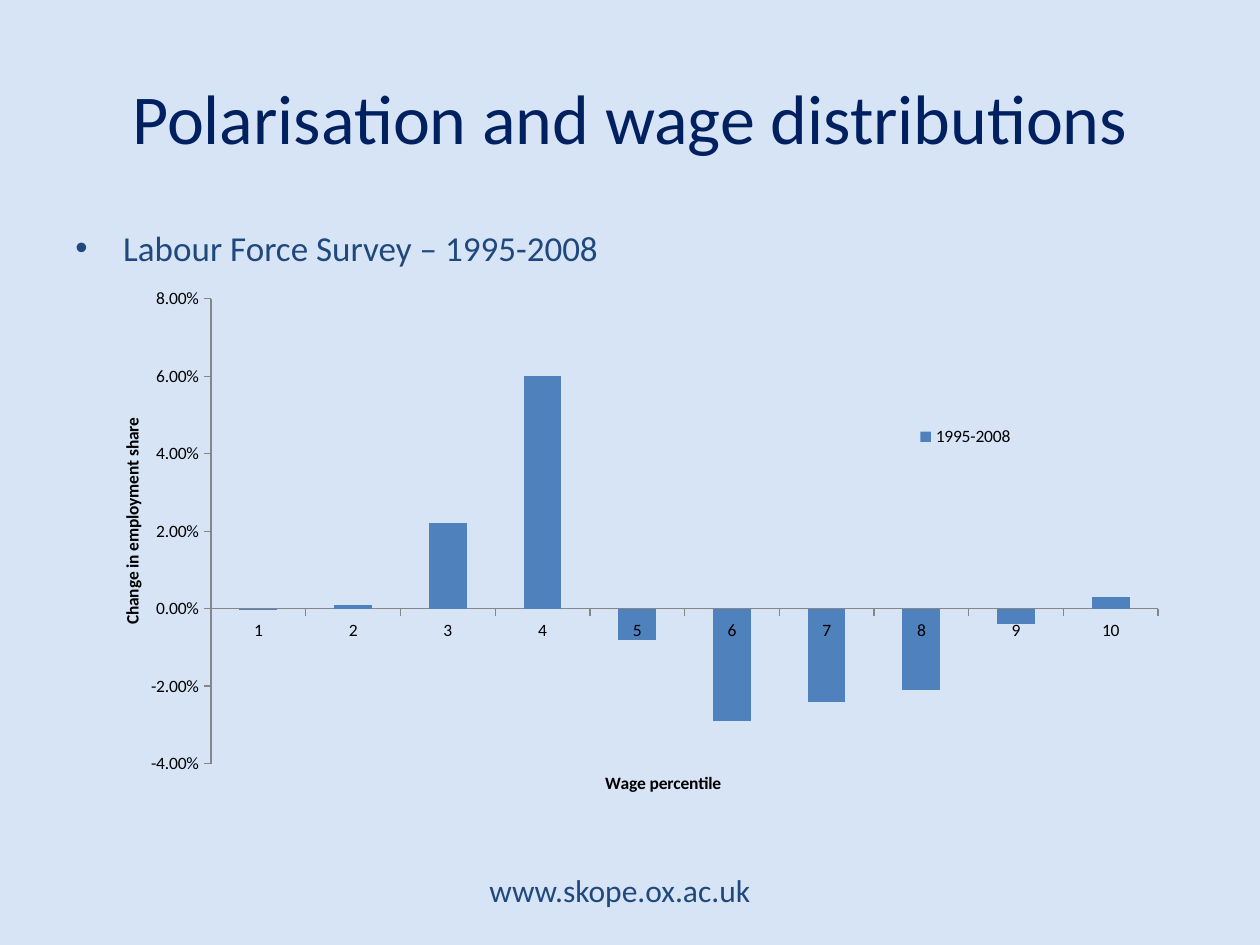
from lxml.etree import SubElement
from pptx import Presentation
from pptx.chart.data import CategoryChartData
from pptx.dml.color import RGBColor
from pptx.enum.chart import XL_CHART_TYPE, XL_LEGEND_POSITION, XL_TICK_MARK
from pptx.enum.text import MSO_ANCHOR, PP_ALIGN
from pptx.oxml import parse_xml
from pptx.oxml.ns import nsdecls, qn
from pptx.util import Inches, Pt


def color(value):
    return RGBColor.from_string(value)


def set_layout(element, index, inner=False, **fractions):
    for layout in element.findall(qn("c:layout")):
        element.remove(layout)
    layout = parse_xml(f"<c:layout {nsdecls('c')}><c:manualLayout/></c:layout>")
    settings = {"layoutTarget": "inner"} if inner else {}
    settings.update(xMode="edge", yMode="edge", **fractions)
    for name, value in settings.items():
        SubElement(layout[0], qn(f"c:{name}")).set("val", str(value))
    element.insert(index, layout)


presentation = Presentation()
presentation.slide_width = Inches(10)
presentation.slide_height = Inches(7.5)
slide = presentation.slides.add_slide(presentation.slide_layouts[6])
slide.background.fill.solid()
slide.background.fill.fore_color.rgb = color("D7E4F5")

texts = [
    ("www.skope.ox.ac.uk", (3.2, 6.86, 3.44, 0.4), 18, "1F497D", PP_ALIGN.CENTER, MSO_ANCHOR.MIDDLE),
    ("Polarisation and wage distributions", (0.5, 0.3, 9, 1.25), 40, "002060", PP_ALIGN.CENTER, MSO_ANCHOR.MIDDLE),
    ("Labour Force Survey – 1995-2008", (0.5, 1.75, 9, 0.5), 20, "1F497D", PP_ALIGN.LEFT, MSO_ANCHOR.TOP),
]
for text, position, size, text_color, alignment, anchor in texts:
    shape = slide.shapes.add_textbox(*map(Inches, position))
    shape.text_frame.word_wrap = True
    shape.text_frame.vertical_anchor = anchor
    paragraph = shape.text_frame.paragraphs[0]
    paragraph.text = text
    paragraph.alignment = alignment
    if alignment == PP_ALIGN.LEFT:
        properties = paragraph._p.get_or_add_pPr()
        properties.set("marL", str(Inches(0.38)))
        properties.set("indent", str(Inches(-0.38)))
        SubElement(properties, qn("a:buFont")).set("typeface", "Arial")
        SubElement(properties, qn("a:buChar")).set("char", "•")
    paragraph.font.name = "Calibri"
    paragraph.font.size = Pt(size)
    paragraph.font.color.rgb = color(text_color)

chart_data = CategoryChartData(number_format="0.00%")
chart_data.categories = [str(percentile) for percentile in range(1, 11)]
chart_data.add_series(
    "1995-2008",
    [-0.0004, 0.001, 0.022, 0.06, -0.008, -0.029, -0.024, -0.021, -0.004, 0.003],
)
chart = slide.shapes.add_chart(
    XL_CHART_TYPE.COLUMN_CLUSTERED,
    Inches(0.67), Inches(2.25), Inches(8.74), Inches(4.09), chart_data,
).chart
chart.has_title = False
chart.font.name = "Calibri"
chart.font.size = Pt(10)
chart.font.color.rgb = color("000000")

plot = chart.plots[0]
plot.gap_width = 150
plot.vary_by_categories = False
series = plot.series[0]
series.invert_if_negative = False
series.format.fill.solid()
series.format.fill.fore_color.rgb = color("4F81BD")

axes = [
    (chart.category_axis, "Wage percentile", 0.47, 0.95),
    (chart.value_axis, "Change in employment share", 0.03, 0.26),
]
for axis, title, left, top in axes:
    axis.has_major_gridlines = False
    axis.major_tick_mark = XL_TICK_MARK.OUTSIDE
    axis.minor_tick_mark = XL_TICK_MARK.NONE
    axis.format.line.color.rgb = color("868686")
    axis.format.line.width = Pt(0.75)
    axis.axis_title.text_frame.text = title
    font = axis.axis_title.text_frame.paragraphs[0].font
    font.name = "Calibri"
    font.size = Pt(10)
    font.bold = True
    font.color.rgb = color("000000")
    set_layout(axis.axis_title._element, 1, x=left, y=top)

value_axis = chart.value_axis
value_axis.minimum_scale = -0.04
value_axis.maximum_scale = 0.08
value_axis.major_unit = 0.02
value_axis.tick_labels.number_format = "0.00%"
value_axis.tick_labels.number_format_is_linked = False

chart.has_legend = True
chart.legend.position = XL_LEGEND_POSITION.RIGHT
chart.legend.include_in_layout = False
set_layout(chart.legend._element, 1, x=0.74, y=0.26, w=0.12, h=0.08)
plot_area = chart._chartSpace.find(f".//{qn('c:plotArea')}")
set_layout(plot_area, 0, inner=True, x=0.115, y=0.03, w=0.86, h=0.91)

presentation.save("out.pptx")
